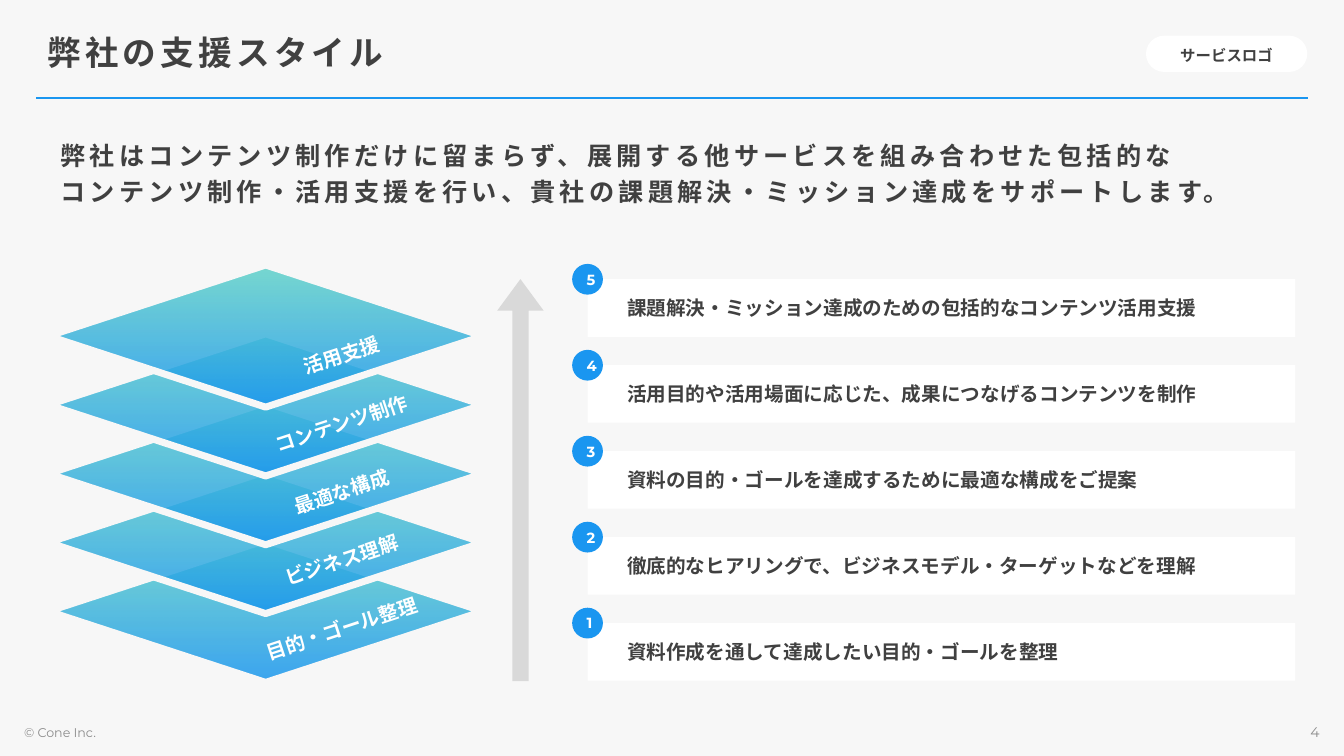
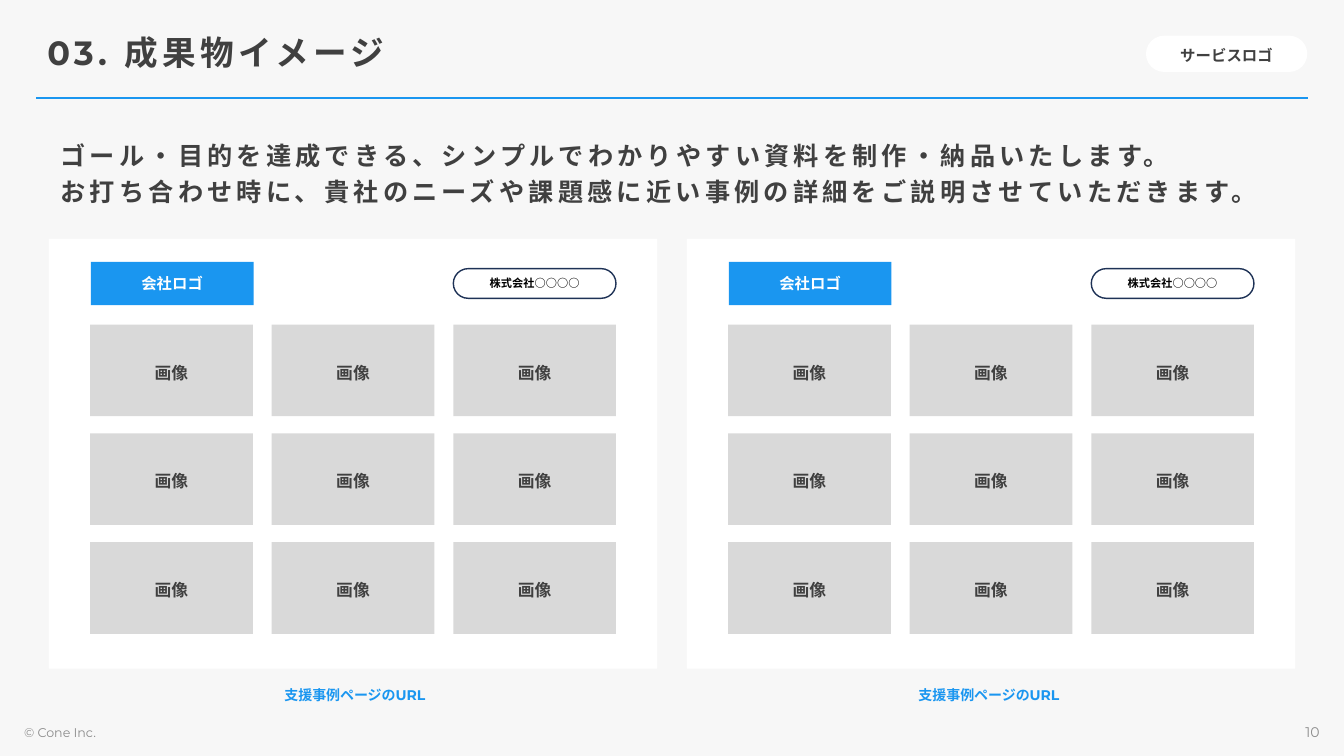
import pptx
import pptx.util
import pptx.dml.color
import pptx.enum.shapes
import pptx.enum.text
import pptx.oxml.ns
import lxml.etree

Pt = pptx.util.Pt
SHAPE = pptx.enum.shapes.MSO_SHAPE
ALIGN = pptx.enum.text.PP_ALIGN
MIDDLE = pptx.enum.text.MSO_ANCHOR.MIDDLE
TOP = pptx.enum.text.MSO_ANCHOR.TOP
qn = pptx.oxml.ns.qn

FONT = "Montserrat"
COLORS = {
    "background": "F7F7F7",
    "blue": "1A96F0",
    "teal": "62D3C9",
    "text": "404040",
    "muted": "8C8C8C",
    "grey": "D9D9D9",
    "navy": "1E3256",
    "white": "FFFFFF",
    "black": "000000",
}
DEFAULT_INSETS = (7.2, 3.6, 7.2, 3.6)
LABEL_INSETS = (7.2, 5.76, 7.2, 2.88)

SERVICE_LOGO = "サービスロゴ"
COPYRIGHT = "© Cone Inc."

STYLE_SLIDE = {
    "title": "弊社の支援スタイル",
    "number": "4",
    "lead": [
        "弊社はコンテンツ制作だけに留まらず、展開する他サービスを組み合わせた包括的な",
        "コンテンツ制作・活用支援を行い、貴社の課題解決・ミッション達成をサポートします。",
    ],
}
STEPS = [
    ("目的・ゴール整理", "資料作成を通して達成したい目的・ゴールを整理"),
    ("ビジネス理解", "徹底的なヒアリングで、ビジネスモデル・ターゲットなどを理解"),
    ("最適な構成", "資料の目的・ゴールを達成するために最適な構成をご提案"),
    ("コンテンツ制作", "活用目的や活用場面に応じた、成果につなげるコンテンツを制作"),
    ("活用支援", "課題解決・ミッション達成のための包括的なコンテンツ活用支援"),
]

OUTPUT_SLIDE = {
    "title": "03. 成果物イメージ",
    "number": "10",
    "lead": [
        "ゴール・目的を達成できる、シンプルでわかりやすい資料を制作・納品いたします。",
        "お打ち合わせ時に、貴社のニーズや課題感に近い事例の詳細をご説明させていただきます。",
    ],
}
CASES = [
    {"left": 34.9, "url_left": 36, "logo": "会社ロゴ", "company": "株式会社○○○○",
     "image": "画像", "url": "支援事例ページのURL"},
    {"left": 490.6, "url_left": 488.9, "logo": "会社ロゴ", "company": "株式会社○○○○",
     "image": "画像", "url": "支援事例ページのURL"},
]


def rgb(name):
    return pptx.dml.color.RGBColor.from_string(COLORS[name])


def write(shape, text, size, color="text", bold=True, align=ALIGN.LEFT,
          insets=DEFAULT_INSETS, anchor=MIDDLE, wrap=True, tracking=None):
    frame = shape.text_frame
    frame.text = text
    frame.word_wrap = wrap
    frame.auto_size = pptx.enum.text.MSO_AUTO_SIZE.NONE
    frame.vertical_anchor = anchor
    (frame.margin_left, frame.margin_top,
     frame.margin_right, frame.margin_bottom) = [Pt(inset) for inset in insets]
    for paragraph in frame.paragraphs:
        paragraph.alignment = align
        for run in paragraph.runs:
            run.font.name = FONT
            run.font.size = Pt(size)
            run.font.bold = bold
            run.font.color.rgb = rgb(color)
            properties = run.font._element
            lxml.etree.SubElement(properties, qn("a:ea")).set("typeface", FONT)
            if tracking:
                properties.set("spc", str(tracking * 100))


def place(shape, left, top, width, height):
    shape.left, shape.top, shape.width, shape.height = map(Pt, (left, top, width, height))


def add_block(slide, kind, box, fill=None, line=None, line_width=1, adjustments=()):
    block = slide.shapes.add_shape(kind, *map(Pt, box))
    block.shadow.inherit = False
    for index, value in enumerate(adjustments):
        block.adjustments[index] = value
    if fill:
        block.fill.solid()
        block.fill.fore_color.rgb = rgb(fill)
    else:
        block.fill.background()
    if line:
        block.line.color.rgb = rgb(line)
        block.line.width = Pt(line_width)
    else:
        block.line.fill.background()
    return block


def add_base(presentation, content):
    slide = presentation.slides.add_slide(presentation.slide_layouts[1])
    slide.background.fill.solid()
    slide.background.fill.fore_color.rgb = rgb("background")

    rule = slide.shapes.add_connector(
        pptx.enum.shapes.MSO_CONNECTOR.STRAIGHT, Pt(25.9), Pt(70), Pt(934.6), Pt(70))
    rule.line.color.rgb = rgb("blue")
    rule.line.width = Pt(2)
    lxml.etree.SubElement(rule._element.spPr, qn("a:effectLst"))

    service = add_block(slide, SHAPE.ROUNDED_RECTANGLE, (818.6, 25.5, 115.2, 25.9),
                        "white", adjustments=[0.5])
    write(service, SERVICE_LOGO, 11, align=ALIGN.CENTER, insets=LABEL_INSETS)

    title = slide.shapes.title
    place(title, 26.6, 15.1, 901.4, 45.4)
    write(title, content["title"], 24, insets=(7.2, 5.76, 7.2, 3.6), tracking=3)
    title.text_frame.paragraphs[0].line_spacing = 0.9

    lead = slide.placeholders[1]
    place(lead, 36, 91.4, 887.8, 65.5)
    write(lead, "\n".join(content["lead"]), 18, insets=(7.2, 11.5, 7.2, 3.6),
          anchor=TOP, tracking=3)
    for index, paragraph in enumerate(lead.text_frame.paragraphs):
        paragraph.line_spacing = 0.9
        paragraph.space_before = Pt(6 if index else 0)
        properties = paragraph._p.get_or_add_pPr()
        properties.set("marL", "0")
        properties.set("indent", "0")
        lxml.etree.SubElement(properties, qn("a:buNone"))

    footers = [(10.1, COPYRIGHT, 9, ALIGN.LEFT),
               (733.7, content["number"], 10, ALIGN.RIGHT)]
    for left, text, size, align in footers:
        footer = slide.shapes.add_textbox(Pt(left), Pt(513.4), Pt(216), Pt(19.4))
        write(footer, text, size, "muted", bold=False, align=align)
    return slide


def add_layer(slide, top):
    layer = add_block(slide, SHAPE.DIAMOND, (34.6, top, 310.3, 101.5),
                      line="background", line_width=5)
    layer.fill.gradient()
    layer.fill.gradient_angle = 90
    stops = zip(layer.fill.gradient_stops, ("blue", "teal"), (0, 0.99))
    for stop, color, position in stops:
        stop.color.rgb = rgb(color)
        stop.position = position
    for color in layer._element.spPr.find(qn("a:gradFill")).iter(qn("a:srgbClr")):
        lxml.etree.SubElement(color, qn("a:alpha")).set("val", "85000")


def build_style_slide(presentation):
    slide = add_base(presentation, STYLE_SLIDE)
    for index in range(len(STEPS)):
        add_layer(slide, 385.9 - index * 49.15)
    for index, (name, description) in enumerate(STEPS):
        label = add_block(slide, SHAPE.RECTANGLE, (180, 430.6 - index * 48.8, 128.2, 36))
        label.rotation = -18.3
        write(label, name, 14, "white", align=ALIGN.CENTER, wrap=False)

        card_top = 445 - index * 61.4
        card = add_block(slide, SHAPE.RECTANGLE, (419.8, card_top, 505.4, 41.2), "white")
        write(card, description, 14, insets=(28.1, 3.6, 7.2, 3.6))
        badge = add_block(slide, SHAPE.OVAL, (408.7, card_top - 10.9, 22, 22), "blue")
        write(badge, str(index + 1), 10.5, "white", align=ALIGN.CENTER)
    add_block(slide, SHAPE.UP_ARROW, (355.2, 199.4, 33.1, 287.2), "grey",
              adjustments=[0.351, 0.679])


def build_output_slide(presentation):
    slide = add_base(presentation, OUTPUT_SLIDE)
    columns, rows = 3, 3
    cell_width, cell_height = 116.2, 65.5
    column_step, row_step = 129.7, 77.7
    for case in CASES:
        add_block(slide, SHAPE.RECTANGLE, (case["left"], 170.6, 434.6, 307), "white")
        grid_left = case["left"] + 29.5
        logo = add_block(slide, SHAPE.RECTANGLE,
                         (grid_left + 0.5, 187.1, cell_width, 30.9), "blue")
        write(logo, case["logo"], 11, "white", align=ALIGN.CENTER)
        company = add_block(
            slide, SHAPE.ROUNDED_RECTANGLE,
            (grid_left + (columns - 1) * column_step, 191.9, cell_width, 21.2),
            "white", "navy", adjustments=[0.5])
        write(company, case["company"], 8, "black", align=ALIGN.CENTER)
        for row in range(rows):
            for column in range(columns):
                box = (grid_left + column * column_step, 231.8 + row * row_step,
                       cell_width, cell_height)
                image = add_block(slide, SHAPE.RECTANGLE, box, "grey")
                write(image, case["image"], 12, align=ALIGN.CENTER, insets=LABEL_INSETS)
        url = add_block(slide, SHAPE.RECTANGLE, (case["url_left"], 488.2, 434.9, 16.6))
        write(url, case["url"], 10, "blue", align=ALIGN.CENTER,
              insets=(7.2, 5.76, 7.2, 5.76))


def main():
    presentation = pptx.Presentation()
    presentation.slide_width = Pt(960)
    presentation.slide_height = Pt(540)
    build_style_slide(presentation)
    build_output_slide(presentation)
    presentation.save("out.pptx")


if __name__ == "__main__":
    main()
